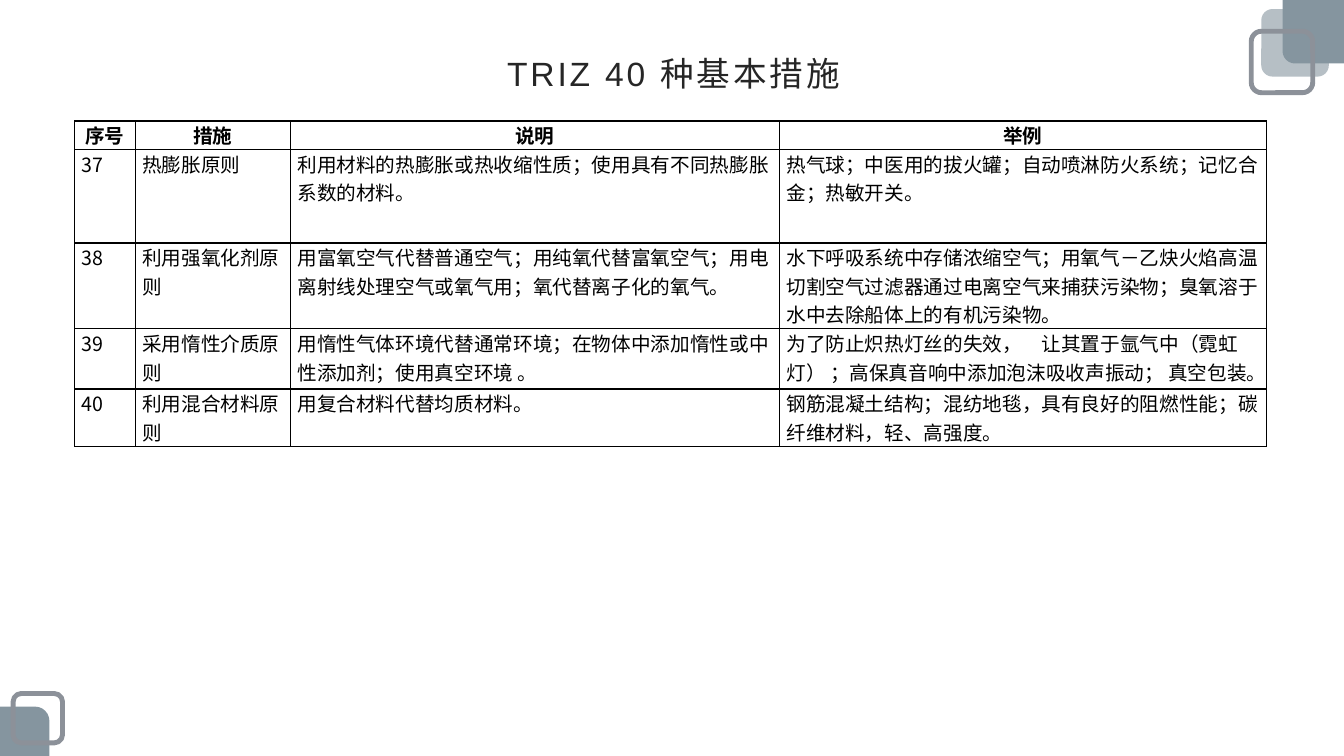
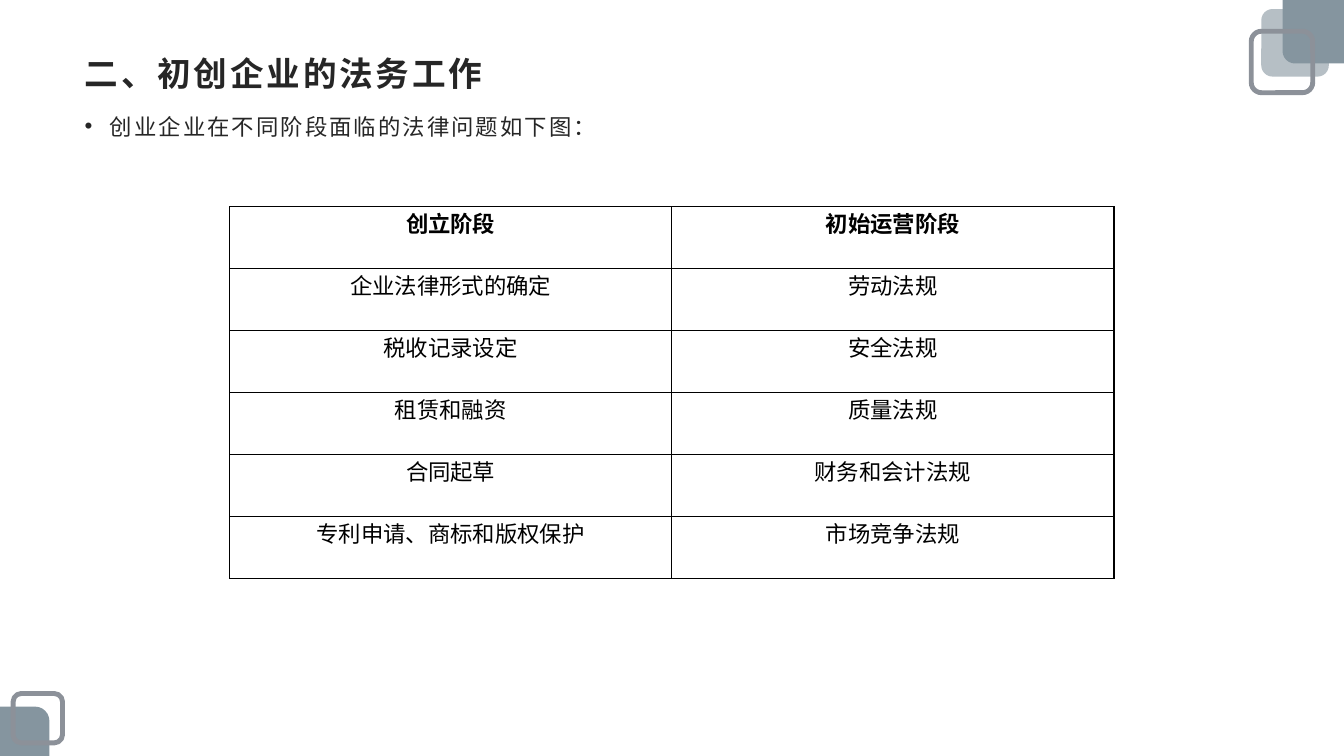
import pptx
import pptx.util
import pptx.dml.color
import pptx.enum.shapes
import pptx.enum.text
import pptx.oxml
import pptx.oxml.ns

Inches = pptx.util.Inches
Pt = pptx.util.Pt
Shape = pptx.enum.shapes.MSO_SHAPE
Align = pptx.enum.text.PP_ALIGN
Anchor = pptx.enum.text.MSO_ANCHOR

SLATE, MIST, RIM = "85959F", "B6BFC5", "8C9199"
INK, BLACK = "262626", "000000"
LATIN, HAN = "Arial", "Noto Sans CJK SC"

STEPS = [
    ["序号", "措施", "说明", "举例"],
    ["37", "热膨胀原则",
     "利用材料的热膨胀或热收缩性质；使用具有不同热膨胀系数的材料。",
     "热气球；中医用的拔火罐；自动喷淋防火系统；记忆合金；热敏开关。"],
    ["38", "利用强氧化剂原则",
     "用富氧空气代替普通空气；用纯氧代替富氧空气；用电离射线处理空气或氧气用；氧代替离子化的氧气。",
     "水下呼吸系统中存储浓缩空气；用氧气－乙炔火焰高温切割空气过滤器通过电离空气来捕获污染物；臭氧溶于水中去除船体上的有机污染物。"],
    ["39", "采用惰性介质原则",
     "用惰性气体环境代替通常环境；在物体中添加惰性或中性添加剂；使用真空环境 。",
     "为了防止炽热灯丝的失效，　让其置于氩气中（霓虹灯） ；高保真音响中添加泡沫吸收声振动； 真空包装。"],
    ["40", "利用混合材料原则", "用复合材料代替均质材料。",
     "钢筋混凝土结构；混纺地毯，具有良好的阻燃性能；碳纤维材料，轻、高强度。"],
]
STAGES = [
    ["创立阶段", "初始运营阶段"],
    ["企业法律形式的确定", "劳动法规"],
    ["税收记录设定", "安全法规"],
    ["租赁和融资", "质量法规"],
    ["合同起草", "财务和会计法规"],
    ["专利申请、商标和版权保护", "市场竞争法规"],
]


def tint(code):
    """Turn a hex string into a colour."""
    return pptx.dml.color.RGBColor.from_string(code)


def node(tag, attrs="", inner=""):
    """Build one drawing element."""
    return pptx.oxml.parse_xml(
        f'<a:{tag} {pptx.oxml.ns.nsdecls("a")} {attrs}>{inner}</a:{tag}>')


def style(para, size, color, bold=False, face=LATIN, track=0):
    """Format every run of a paragraph."""
    for run in para.runs:
        font = run.font
        font.size, font.bold, font.name = Pt(size), bold, face
        font.color.rgb = tint(color)
        props = run._r.get_or_add_rPr()
        props.append(node("ea", f'typeface="{HAN}"'))
        if track:
            props.set("spc", str(int(track * 100)))


def block(slide, kind, box, fill=None, line=None):
    """Draw a filled or outlined preset shape."""
    shape = slide.shapes.add_shape(kind, *map(Inches, box))
    shape.shadow.inherit = False
    if fill:
        shape.fill.solid()
        shape.fill.fore_color.rgb = tint(fill)
    else:
        shape.fill.background()
    if line:
        shape.line.color.rgb = tint(line)
        shape.line.width = Pt(3.5)
    else:
        shape.line.fill.background()
    return shape


def decor(slide):
    """Draw the corner squares that all slides share."""
    foot = block(slide, Shape.ROUND_1_RECTANGLE, (0, 7.01, 0.49, 0.49), SLATE)
    foot.adjustments[0] = 0.29
    block(slide, Shape.ROUNDED_RECTANGLE, (12.51, 0.09, 0.67, 0.67), MIST)
    head = block(slide, Shape.ROUND_1_RECTANGLE, (12.72, 0, 0.62, 0.63), SLATE)
    head.adjustments[0] = 0.2
    head.rotation = 180
    for box in (12.41, 0.31, 0.61, 0.61), (0.13, 6.88, 0.49, 0.49):
        block(slide, Shape.ROUNDED_RECTANGLE, box, line=RIM)


def label(slide, box, text, pads, anchor):
    """Add a wrapped text box and return its paragraph."""
    frame = slide.shapes.add_textbox(*map(Inches, box)).text_frame
    frame.word_wrap = True
    frame.vertical_anchor = anchor
    (frame.margin_left, frame.margin_top,
     frame.margin_right, frame.margin_bottom) = map(Inches, pads)
    frame.text = text
    return frame.paragraphs[0]


def title(slide, text, align=Align.LEFT, bold=False):
    """Place the slide title."""
    para = label(slide, (0.73, 0.48, 11.87, 0.48), text,
                 (0.11, 0.04, 0.08, 0.04), Anchor.MIDDLE)
    para.alignment = align
    style(para, 24, INK, bold, track=2)


def bullet(slide, box, text):
    """Place a single bulleted line."""
    para = label(slide, box, text, (0.11, 0, 0.09, 0), Anchor.TOP)
    para.line_spacing = 1.3
    para.space_after = Pt(10)
    props = para._p.get_or_add_pPr()
    props.set("marL", str(Inches(0.25)))
    props.set("indent", str(Inches(-0.25)))
    props.append(node("buFont", f'typeface="{LATIN}"'))
    props.append(node("buChar", 'char="•"'))
    style(para, 16, INK, track=1.5)


def border(cell):
    """Rule all four sides of a cell."""
    props = cell._tc.get_or_add_tcPr()
    paint = f'<a:solidFill><a:srgbClr val="{BLACK}"/></a:solidFill>'
    for spot, side in enumerate("LRTB"):
        props.insert(spot, node(f"ln{side}", f'w="{Pt(1)}"', paint))


def grid(slide, left, top, cols, rows, data, size, face, align):
    """Place a ruled table with a bold, centred first row."""
    box = map(Inches, (left, top, sum(cols), sum(rows)))
    table = slide.shapes.add_table(len(rows), len(cols), *box).table
    table.first_row = table.horz_banding = False
    for col, width in zip(table.columns, cols):
        col.width = Inches(width)
    for row, height, texts in zip(table.rows, rows, data):
        row.height = Inches(height)
        top_row = texts is data[0]
        for cell, text in zip(row.cells, texts):
            cell.fill.background()
            border(cell)
            cell.margin_left = cell.margin_right = Inches(0.07)
            cell.margin_top = cell.margin_bottom = 0
            cell.text_frame.text = text
            para = cell.text_frame.paragraphs[0]
            para.alignment = Align.CENTER if top_row else align
            style(para, size, BLACK, top_row, face)


def steps(slide):
    """Fill the slide on the basic measures."""
    title(slide, "TRIZ 40 种基本措施", Align.CENTER)
    grid(slide, 0.74, 1.2, [0.6, 1.54, 4.85, 4.83],
         [0.28, 0.93, 0.85, 0.6, 0.57], STEPS, 14, HAN, Align.LEFT)


def stages(slide):
    """Fill the slide on legal work by stage."""
    title(slide, "二、初创企业的法务工作", bold=True)
    bullet(slide, (0.73, 1.04, 11.87, 5.89),
           "创业企业在不同阶段面临的法律问题如下图：")
    grid(slide, 2.28, 2.05, [4.38, 4.39], [0.615] * len(STAGES),
         STAGES, 16, LATIN, Align.CENTER)


def main():
    """Build and save the deck."""
    deck = pptx.Presentation()
    deck.slide_width, deck.slide_height = Inches(13.33), Inches(7.5)
    for fill in steps, stages:
        slide = deck.slides.add_slide(deck.slide_layouts[6])
        decor(slide)
        fill(slide)
    deck.save("out.pptx")


if __name__ == "__main__":
    main()
